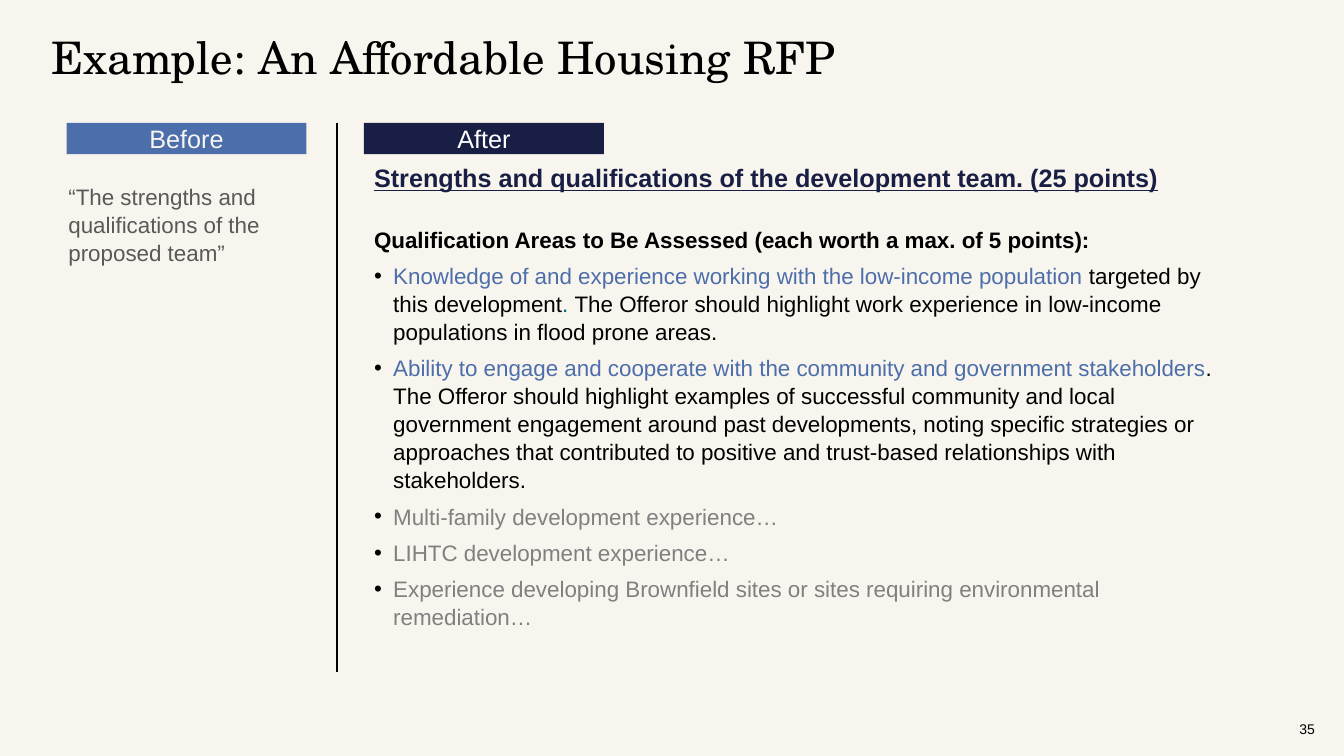
import pptx
import pptx.dml.color
import pptx.enum.shapes
import pptx.enum.text
import pptx.oxml
import pptx.oxml.ns
import pptx.util
from pptx.util import Inches

BLACK, BLUE, NAVY, GRAY = "000000", "4C6EAB", "181E44", "808080"
BODY_FONT, TITLE_FONT = "Arial", "TeX Gyre Schola"
LABEL_TOP, LABEL_WIDTH, LABEL_HEIGHT = 1.22, 2.38, 0.31
LINE_SPACING = 1.04

title = "Example: An Affordable Housing RFP"
page_number = "35"
before_text = "“The strengths and qualifications of the proposed team”"
labels = [("Before", 0.66, BLUE, "F7F5EF"), ("After", 3.61, NAVY, "FFFFFF")]
heading = "Strengths and qualifications of the development team. (25 points)"
subheading = "Qualification Areas to Be Assessed (each worth a max. of 5 points):"
criteria = [
    [
        ("Knowledge of and experience working with the low-income population ", BLUE),
        ("targeted by this development", BLACK),
        (". ", "006586"),
        ("The Offeror should highlight work experience in low-income populations "
         "in flood prone areas.", BLACK),
    ],
    [
        ("Ability to engage and cooperate with the community and government stakeholders", BLUE),
        (". The Offeror should highlight examples of successful community and local "
         "government engagement around past developments, noting specific strategies or "
         "approaches that contributed to positive and trust-based relationships with "
         "stakeholders.", BLACK),
    ],
    [("Multi-family development experience…", GRAY)],
    [("LIHTC development experience…", GRAY)],
    [("Experience developing Brownfield sites or sites requiring environmental "
      "remediation…", GRAY)],
]


def color(value):
    return pptx.dml.color.RGBColor.from_string(value)


def add_run(paragraph, text, size, value, font=BODY_FONT, bold=False, underline=False):
    run = paragraph.add_run()
    run.text = text
    run.font.name = font
    run.font.size = pptx.util.Pt(size)
    run.font.bold = bold
    run.font.underline = underline
    run.font.color.rgb = color(value)


def add_text_box(slide, left, top, width, height, insets=(0.1, 0.05, 0.1, 0.05)):
    shape = slide.shapes.add_textbox(*map(Inches, (left, top, width, height)))
    frame = shape.text_frame
    frame.word_wrap = True
    frame.margin_left, frame.margin_top, frame.margin_right, frame.margin_bottom = map(
        Inches, insets)
    return frame


def add_bullet(paragraph):
    properties = paragraph._p.get_or_add_pPr()
    properties.set("marL", str(Inches(0.19)))
    properties.set("indent", str(-Inches(0.19)))
    namespace = pptx.oxml.ns.nsdecls("a")
    for markup in (
        f'<a:buClr {namespace}><a:srgbClr val="{BLACK}"/></a:buClr>',
        f'<a:buFont {namespace} typeface="{BODY_FONT}"/>',
        f'<a:buChar {namespace} char="•"/>',
    ):
        properties.append(pptx.oxml.parse_xml(markup))


def add_label(slide, text, left, fill, text_color):
    shape = slide.shapes.add_shape(
        pptx.enum.shapes.MSO_SHAPE.RECTANGLE, Inches(left), Inches(LABEL_TOP),
        Inches(LABEL_WIDTH), Inches(LABEL_HEIGHT))
    shape.shadow.inherit = False
    shape.fill.solid()
    shape.fill.fore_color.rgb = color(fill)
    shape.line.fill.background()
    shape.text_frame.vertical_anchor = pptx.enum.text.MSO_ANCHOR.MIDDLE
    paragraph = shape.text_frame.paragraphs[0]
    paragraph.alignment = pptx.enum.text.PP_ALIGN.CENTER
    add_run(paragraph, text, 18, text_color)


def add_divider(slide):
    line = slide.shapes.add_connector(
        pptx.enum.shapes.MSO_CONNECTOR.STRAIGHT,
        Inches(3.34), Inches(LABEL_TOP), Inches(3.34), Inches(6.67))
    line.line.color.rgb = color(BLACK)
    line.line.width = pptx.util.Pt(1.5)
    line._element.spPr.append(
        pptx.oxml.parse_xml(f'<a:effectLst {pptx.oxml.ns.nsdecls("a")}/>'))


def add_after_text(slide):
    frame = add_text_box(slide, 3.58, 1.53, 8.82, 5.58, (0.13, 0.07, 0.13, 0.07))
    paragraph = frame.paragraphs[0]
    paragraph.line_spacing = LINE_SPACING
    add_run(paragraph, heading, 18, NAVY, bold=True, underline=True)
    paragraph = frame.add_paragraph()
    paragraph.line_spacing = LINE_SPACING
    paragraph.space_before = pptx.util.Pt(23)
    add_run(paragraph, subheading, 16, BLACK, bold=True)
    for criterion in criteria:
        paragraph = frame.add_paragraph()
        paragraph.line_spacing = LINE_SPACING
        paragraph.space_before = pptx.util.Pt(6)
        add_bullet(paragraph)
        for text, value in criterion:
            add_run(paragraph, text, 16, value)


def main():
    presentation = pptx.Presentation()
    presentation.slide_width, presentation.slide_height = Inches(13.33), Inches(7.5)
    slide = presentation.slides.add_slide(presentation.slide_layouts[6])
    slide.background.fill.solid()
    slide.background.fill.fore_color.rgb = color("F8F5EE")

    frame = add_text_box(slide, 0.41, 0.29, 12, 0.59, (0.1, 0, 0.1, 0.05))
    add_run(frame.paragraphs[0], title, 32, BLACK, TITLE_FONT)

    frame = add_text_box(slide, 0.58, 1.76, 2.78, 4.43)
    frame.paragraphs[0].line_spacing = LINE_SPACING
    add_run(frame.paragraphs[0], before_text, 16, "595959")

    add_after_text(slide)
    add_divider(slide)
    for label in labels:
        add_label(slide, *label)

    frame = add_text_box(slide, 12.79, 7.03, 0.5, 0.4)
    frame.vertical_anchor = pptx.enum.text.MSO_ANCHOR.MIDDLE
    add_run(frame.paragraphs[0], page_number, 10, BLACK)
    presentation.save("out.pptx")


if __name__ == "__main__":
    main()
